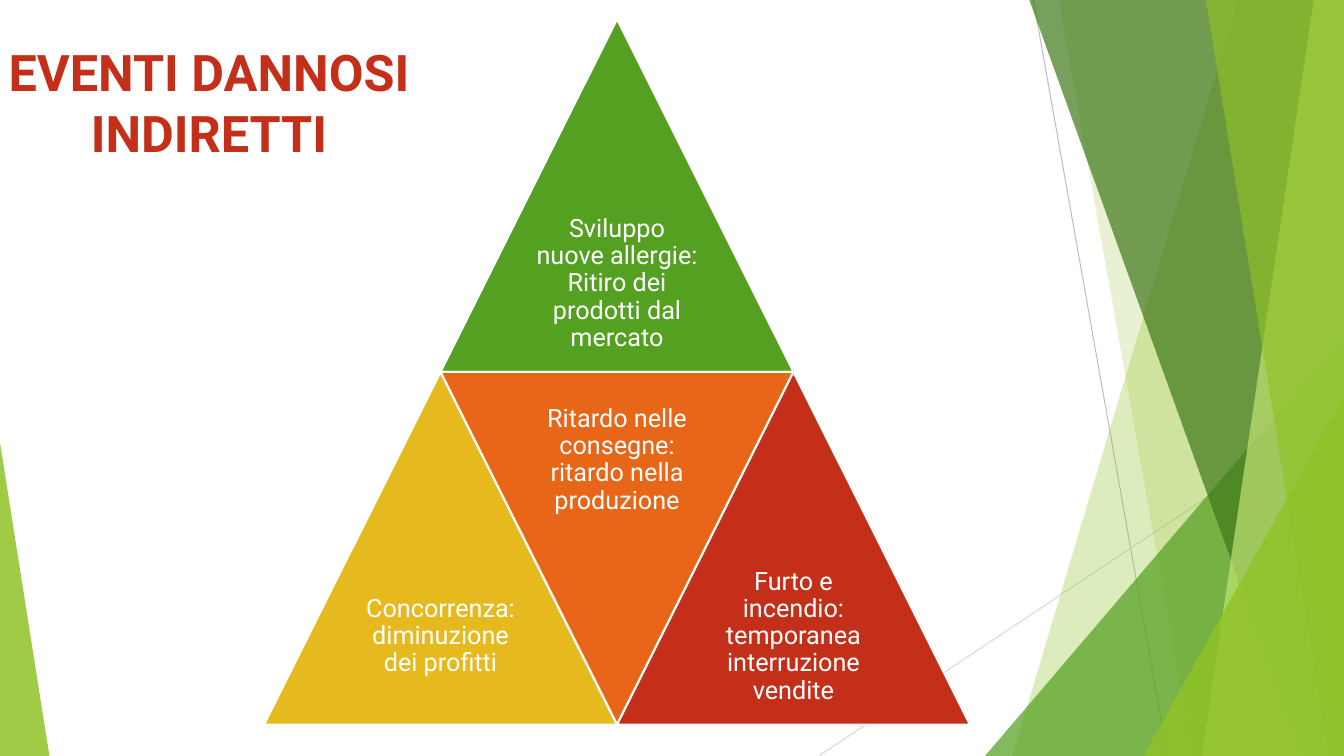
"""Build the slide on indirect damaging events: a four-part pyramid beside green facets."""
from dataclasses import dataclass

from lxml import etree
from pptx import Presentation
from pptx.dml.color import RGBColor
from pptx.enum.shapes import MSO_CONNECTOR, MSO_SHAPE
from pptx.enum.text import MSO_ANCHOR, MSO_AUTO_SIZE, PP_ALIGN
from pptx.oxml.ns import qn
from pptx.util import Inches, Pt

STRAIGHT = MSO_CONNECTOR.STRAIGHT
TRIANGLE = MSO_SHAPE.ISOSCELES_TRIANGLE
TOP, MIDDLE = MSO_ANCHOR.TOP, MSO_ANCHOR.MIDDLE
CENTER = PP_ALIGN.CENTER
FIXED_SIZE = MSO_AUTO_SIZE.NONE

WIDTH, HEIGHT = Inches(13.33), Inches(7.5)
FONT = "Roboto"
WHITE, RED, LIME = "FFFFFF", "C42F1A", "90C226"
PYRAMID_LEFT, PYRAMID_TOP = 19.65, 2.53
COLUMN, ROW = 13.13, 23.33


@dataclass(frozen=True)
class Ray:
    start: tuple[float, float]
    end: tuple[float, float]
    color: str


@dataclass(frozen=True)
class Wedge:
    top_left: float
    bottom_left: float
    color: str
    opacity: int


@dataclass(frozen=True)
class Corner:
    left: float
    top: float
    width: float
    apex: float
    color: str
    opacity: int


@dataclass(frozen=True)
class Part:
    column: int
    row: int
    inverted: bool
    color: str
    text: str


RAYS = [
    Ray((76.89, 0), (86.87, 100), "BFBFBF"),
    Ray((100, 53.73), (60.92, 100), "D9D9D9"),
]
FACETS = [
    Wedge(92.12, 75.32, LIME, 30),
    Wedge(78.77, 88.75, LIME, 20),
    Corner(73.29, 44.4, 26.71, 1, "54A021", 72),
    Wedge(76.59, 96.85, "3F7819", 70),
    Wedge(97.75, 89.42, "C0E474", 70),
    Wedge(89.72, 98.87, LIME, 65),
    Corner(85.07, 52.4, 14.93, 1, LIME, 80),
    Corner(0, 58.53, 3.68, 0, LIME, 85),
]
PARTS = [
    Part(1, 0, False, "54A021", "Sviluppo nuove allergie: Ritiro dei prodotti dal mercato"),
    Part(0, 2, False, "E6B91E", "Concorrenza: diminuzione dei profitti"),
    Part(1, 2, True, "E76618", "Ritardo nelle consegne: ritardo nella produzione"),
    Part(2, 2, False, RED, "Furto e incendio: temporanea interruzione vendite"),
]


def rgb(value: str) -> RGBColor:
    """Turn a hex string into a colour."""
    return RGBColor.from_string(value)


def across(percent: float) -> int:
    """Return a share of the slide width."""
    return round(WIDTH * percent / 100)


def down(percent: float) -> int:
    """Return a share of the slide height."""
    return round(HEIGHT * percent / 100)


def box(left: float, top: float, width: float, height: float) -> tuple[int, int, int, int]:
    """Convert percentages of the slide into a position and size."""
    return across(left), down(top), across(width), down(height)


def paint(shape, color: str, opacity: int = 100) -> None:
    """Give a shape a plain fill without shadow or outline."""
    shape.shadow.inherit = False
    shape.fill.solid()
    shape.fill.fore_color.rgb = rgb(color)
    shape.line.fill.background()
    if opacity < 100:
        fill_color = shape.element.spPr.find(".//" + qn("a:srgbClr"))
        etree.SubElement(fill_color, qn("a:alpha"), val=str(opacity * 1000))


def write(shape, text: str, size: int, color: str, bold: bool, anchor) -> None:
    """Write one centred paragraph into a shape."""
    frame = shape.text_frame
    frame.word_wrap = True
    frame.auto_size = FIXED_SIZE
    frame.vertical_anchor = anchor
    paragraph = frame.paragraphs[0]
    paragraph.alignment = CENTER
    run = paragraph.add_run()
    run.text = text
    run.font.name = FONT
    run.font.size = Pt(size)
    run.font.bold = bold
    run.font.color.rgb = rgb(color)


def draw_ray(slide, ray: Ray) -> None:
    """Draw a thin background line."""
    (x1, y1), (x2, y2) = ray.start, ray.end
    connector = slide.shapes.add_connector(STRAIGHT, across(x1), down(y1), across(x2), down(y2))
    connector.line.color.rgb = rgb(ray.color)
    connector.line.width = Pt(0.75)
    etree.SubElement(connector.element.spPr, qn("a:effectLst"))


def draw_facet(slide, facet: Wedge | Corner) -> None:
    """Draw a translucent facet reaching the bottom of the slide."""
    if isinstance(facet, Wedge):
        builder = slide.shapes.build_freeform(across(facet.top_left), 0)
        builder.add_line_segments([(WIDTH, 0), (WIDTH, HEIGHT), (across(facet.bottom_left), HEIGHT)])
        shape = builder.convert_to_shape()
    else:
        shape = slide.shapes.add_shape(
            TRIANGLE, *box(facet.left, facet.top, facet.width, 100 - facet.top))
        shape.adjustments[0] = facet.apex
    paint(shape, facet.color, facet.opacity)


def draw_part(slide, part: Part) -> None:
    """Draw one pyramid triangle and its label."""
    left = PYRAMID_LEFT + part.column * COLUMN
    top = PYRAMID_TOP + part.row * ROW
    triangle = slide.shapes.add_shape(TRIANGLE, *box(left, top, 2 * COLUMN, 2 * ROW))
    paint(triangle, part.color)
    triangle.line.color.rgb = rgb(WHITE)
    triangle.line.width = Pt(1.5)
    triangle.rotation = 180 if part.inverted else 0
    label_top = top if part.inverted else top + ROW
    label = slide.shapes.add_textbox(*box(left + COLUMN / 2, label_top, COLUMN, ROW))
    frame = label.text_frame
    frame.margin_left = frame.margin_right = Inches(0.07)
    frame.margin_top = frame.margin_bottom = Inches(0.07)
    write(label, part.text, 18, WHITE, False, MIDDLE)
    frame.paragraphs[0].line_spacing = 0.9


def main() -> None:
    """Build and save the presentation."""
    presentation = Presentation()
    presentation.slide_width, presentation.slide_height = WIDTH, HEIGHT
    slide = presentation.slides.add_slide(presentation.slide_layouts[5])
    title = slide.shapes.title
    title.left, title.top, title.width, title.height = box(-0.98, 4.8, 33.08, 17.47)
    write(title, "EVENTI DANNOSI INDIRETTI", 36, RED, True, TOP)
    for ray in RAYS:
        draw_ray(slide, ray)
    for facet in FACETS:
        draw_facet(slide, facet)
    for part in PARTS:
        draw_part(slide, part)
    presentation.save("out.pptx")


if __name__ == "__main__":
    main()
